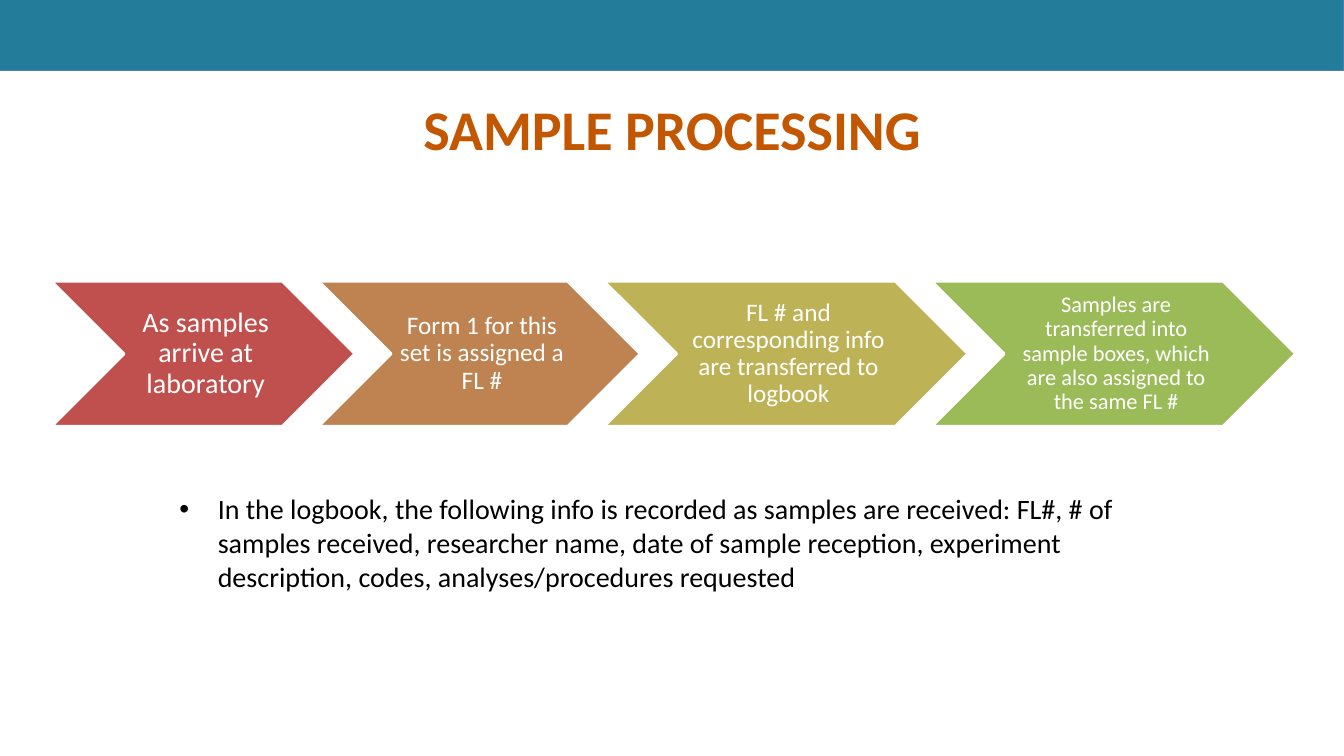
from lxml import etree
from pptx import Presentation
from pptx import util as u
from pptx.dml.color import RGBColor
from pptx.enum import shapes, text
from pptx.oxml.ns import qn

SLIDE_W, SLIDE_H = 13.33, 7.5
FONT = "Calibri"
COLORS = {
    "band": "237C9A", "band_line": "4B7EBC", "title": "C25700",
    "body": "000000", "white": "FFFFFF",
    "red": "C0504D", "brown": "BE8351", "olive": "BDB255", "green": "9BBB59",
}

# Wording, fill, width in inches and text size of each step
STEPS = [
    ("As samples arrive at laboratory", "red", 3.01, 20),
    ("Form 1 for this set is assigned a FL #", "brown", 3.19, 18),
    ("FL # and corresponding info are transferred to logbook", "olive", 3.61, 18),
    ("Samples are transferred into sample boxes, which are also assigned "
     "to the same FL #", "green", 3.61, 16),
]
LOGBOOK_NOTE = (
    "In the logbook, the following info is recorded as samples are received: "
    "FL#, # of samples received, researcher name, date of sample reception, "
    "experiment description, codes, analyses/procedures requested"
)


def rgb(name):
    return RGBColor.from_string(COLORS[name])


def place(part, box):
    part.left, part.top, part.width, part.height = (u.Inches(v) for v in box)


def set_frame(frame, insets, anchor):
    frame.word_wrap = True
    frame.auto_size = text.MSO_AUTO_SIZE.NONE
    frame.vertical_anchor = anchor
    (frame.margin_left, frame.margin_top,
     frame.margin_right, frame.margin_bottom) = (u.Inches(v) for v in insets)


def add_run(paragraph, wording, size, color, bold=False):
    run = paragraph.add_run()
    run.text = wording
    run.font.name = FONT
    run.font.size = u.Pt(size)
    run.font.bold = bold
    run.font.color.rgb = rgb(color)


def add_filled(slide, kind, box, fill, line, line_width):
    part = slide.shapes.add_shape(kind, *(u.Inches(v) for v in box))
    part.shadow.inherit = False
    part.fill.solid()
    part.fill.fore_color.rgb = rgb(fill)
    part.line.color.rgb = rgb(line)
    part.line.width = u.Pt(line_width)
    return part


def add_band(slide, box):
    add_filled(slide, shapes.MSO_SHAPE.RECTANGLE, box, "band", "band_line", 0.75)


def fill_title(slide, box):
    heading = slide.shapes.title
    place(heading, box)
    set_frame(heading.text_frame, (0.1, 0.05, 0.1, 0), text.MSO_ANCHOR.TOP)
    paragraph = heading.text_frame.paragraphs[0]
    paragraph.alignment = text.PP_ALIGN.CENTER
    add_run(paragraph, "SAMPLE PROCESSING", 40, "title", bold=True)


def add_process(slide, box):
    """Chevrons from left to right, each reaching into the notch of the next."""
    left, top, _, height = box
    overlap = height / 4
    for wording, fill, width, size in STEPS:
        step = add_filled(slide, shapes.MSO_SHAPE.CHEVRON,
                          (left, top, width, height), fill, "white", 2)
        set_frame(step.text_frame, (0.08, 0.03, 0.03, 0.03), text.MSO_ANCHOR.MIDDLE)
        paragraph = step.text_frame.paragraphs[0]
        paragraph.alignment = text.PP_ALIGN.CENTER
        paragraph.line_spacing = 0.9
        add_run(paragraph, wording, size, "white")
        left += width - overlap


def fill_note(slide, box):
    note = slide.placeholders[1]
    place(note, box)
    set_frame(note.text_frame, (0.1, 0.05, 0.1, 0), text.MSO_ANCHOR.TOP)
    paragraph = note.text_frame.paragraphs[0]
    paragraph.level = 1
    paragraph.space_before = u.Pt(0)
    # Hanging bullet
    props = paragraph._p.get_or_add_pPr()
    props.set("marL", str(u.Inches(0.88)))
    props.set("indent", str(u.Inches(-0.38)))
    etree.SubElement(props, qn("a:buFont")).set("typeface", "Arial")
    etree.SubElement(props, qn("a:buChar")).set("char", "•")
    add_run(paragraph, LOGBOOK_NOTE, 20, "body")


def main():
    deck = Presentation()
    deck.slide_width, deck.slide_height = u.Inches(SLIDE_W), u.Inches(SLIDE_H)
    slide = deck.slides.add_slide(deck.slide_layouts[1])
    add_band(slide, (0, 0, SLIDE_W, 0.7))
    fill_title(slide, (SLIDE_W * 0.05, 0.89, SLIDE_W * 0.9, 0.65))
    add_process(slide, (0.51, 2.79, SLIDE_W - 1, 1.44))
    fill_note(slide, (1.18, 4.83, 10.69, 1.19))
    deck.save("out.pptx")


if __name__ == "__main__":
    main()
